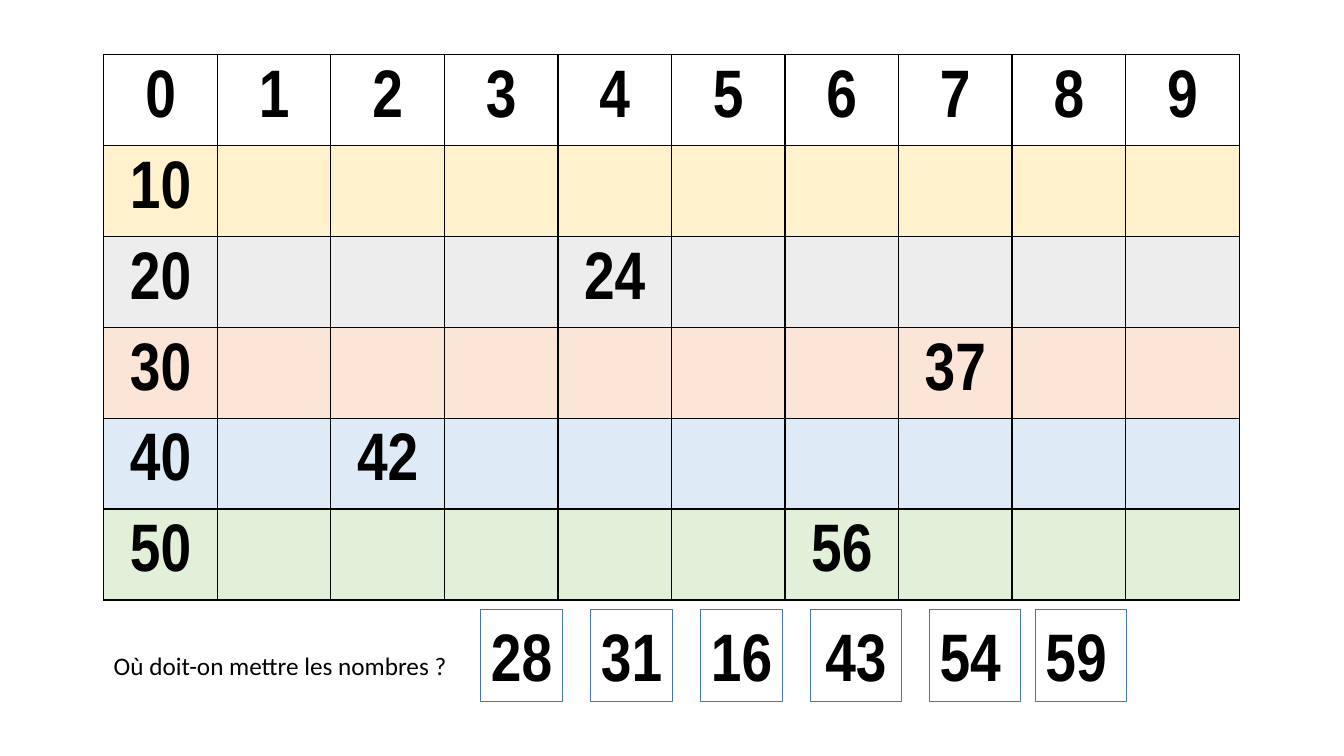
from dataclasses import dataclass

from lxml.etree import SubElement
from pptx import Presentation
from pptx.dml.color import RGBColor
from pptx.enum.shapes import MSO_SHAPE as SHAPE
from pptx.enum.text import MSO_ANCHOR as ANCHOR, PP_ALIGN as ALIGN
from pptx.oxml.ns import qn
from pptx.util import Inches, Pt


@dataclass(frozen=True)
class Theme:
    ink: str = "000000"
    card_line: str = "4472C4"
    # One fill per row of tens
    rows: tuple = (None, "FFF2CC", "EDEDED", "FBE5D6", "DEEBF7", "E2F0D9")
    number_font: str = "Arial Narrow"
    text_font: str = "Calibri"
    number_size: int = 48
    text_size: int = 18


THEME = Theme()

# Number grid: ten columns of units, six rows of tens
LEFT, TOP = 1.03, 0.54
COLS, ROWS = 10, 6
COL_W, ROW_H = 1.126, 0.902
PLACED = {24, 37, 42, 56}

# Cards below the grid: number, left, width, alignment
CARD_TOP, CARD_H = 6.05, 0.91
NARROW, WIDE = 0.81, 0.9
CARDS = (
    (28, 4.77, NARROW, ALIGN.LEFT),
    (31, 5.86, NARROW, ALIGN.CENTER),
    (16, 6.95, NARROW, ALIGN.CENTER),
    (43, 8.04, WIDE, ALIGN.CENTER),
    (54, 9.22, WIDE, ALIGN.LEFT),
    (59, 10.27, WIDE, ALIGN.LEFT),
)


def add_text(tf, text, font, size, bold=False, align=ALIGN.LEFT):
    p = tf.paragraphs[0]
    p.alignment = align
    r = p.add_run()
    r.text = text
    r.font.name = font
    r.font.size = Pt(size)
    r.font.bold = bold
    r.font.color.rgb = RGBColor.from_string(THEME.ink)


def add_number(tf, number, align=ALIGN.CENTER):
    add_text(tf, str(number), THEME.number_font, THEME.number_size, True, align)


def format_cell(cell, fill):
    # Borders come before the fill in the cell properties
    tcPr = cell._tc.get_or_add_tcPr()
    for side in ("a:lnL", "a:lnR", "a:lnT", "a:lnB"):
        ln = SubElement(tcPr, qn(side), w=str(Pt(1)))
        solid = SubElement(ln, qn("a:solidFill"))
        SubElement(solid, qn("a:srgbClr"), val=THEME.ink)
    if fill:
        cell.fill.solid()
        cell.fill.fore_color.rgb = RGBColor.from_string(fill)
    else:
        cell.fill.background()
    cell.vertical_anchor = ANCHOR.MIDDLE


def add_grid(slide):
    table = slide.shapes.add_table(
        ROWS, COLS, Inches(LEFT), Inches(TOP),
        Inches(COLS * COL_W), Inches(ROWS * ROW_H)).table
    table.first_row = table.horz_banding = False
    for col in table.columns:
        col.width = Inches(COL_W)
    for tens, row in enumerate(table.rows):
        row.height = Inches(ROW_H)
        for units, cell in enumerate(row.cells):
            format_cell(cell, THEME.rows[tens])
            number = 10 * tens + units
            if tens == 0 or units == 0 or number in PLACED:
                add_number(cell.text_frame, number)


def add_question(slide, text):
    s = slide.shapes.add_textbox(Inches(LEFT), Inches(6.4), Inches(3.66), Inches(0.4))
    s.text_frame.word_wrap = True
    add_text(s.text_frame, text, THEME.text_font, THEME.text_size)


def add_card(slide, number, left, width, align):
    s = slide.shapes.add_shape(SHAPE.RECTANGLE, Inches(left), Inches(CARD_TOP),
                               Inches(width), Inches(CARD_H))
    s.shadow.inherit = False
    s.fill.background()
    s.line.color.rgb = RGBColor.from_string(THEME.card_line)
    s.line.width = Pt(0.75)
    tf = s.text_frame
    tf.word_wrap = width == WIDE
    tf.vertical_anchor = ANCHOR.TOP
    add_number(tf, number, align)


def main():
    prs = Presentation()
    prs.slide_width, prs.slide_height = Inches(13.33), Inches(7.5)
    slide = prs.slides.add_slide(prs.slide_layouts[6])
    add_grid(slide)
    add_question(slide, "Où doit-on mettre les nombres ?")
    for card in CARDS:
        add_card(slide, *card)
    prs.save("out.pptx")


if __name__ == "__main__":
    main()
